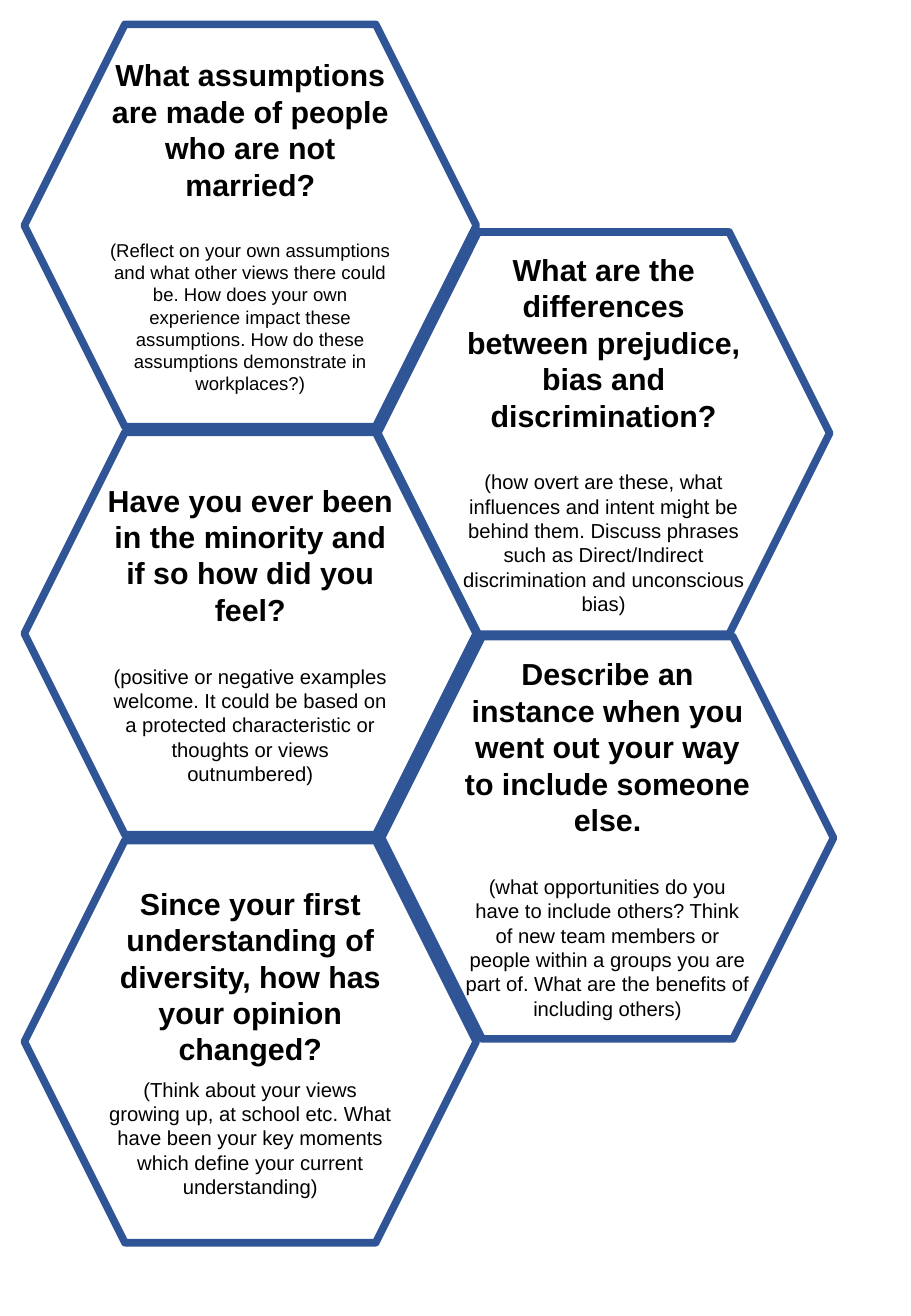
import pptx
import pptx.util
import pptx.dml.color
import pptx.enum.shapes
import pptx.enum.text

Cm = pptx.util.Cm
Pt = pptx.util.Pt
hues = {"fill": "FFFFFF", "edge": "2F5597", "text": "000000"}
rgb = {name: pptx.dml.color.RGBColor.from_string(hue) for name, hue in hues.items()}

deck = pptx.Presentation()
deck.slide_width, deck.slide_height = Cm(19.05), Cm(27.51)
slide = deck.slides.add_slide(deck.slide_layouts[6])

left, top, step = 0.51, 0.51, 8.53
cards = [
    (left, top, 11, 21.6,
     "What assumptions are made of people who are not married?",
     "(Reflect on your own assumptions and what other views there could be. How does your own experience impact these assumptions. How do these assumptions demonstrate in workplaces?)"),
    (7.9, 4.85, 12, 21.6,
     "What are the differences between prejudice, bias and discrimination?",
     "(how overt are these, what influences and intent might be behind them. Discuss phrases such as Direct/Indirect discrimination and unconscious bias)"),
    (left, top + step, 12, 21.6,
     "Have you ever been in the minority and if so how did you feel?",
     "(positive or negative examples welcome. It could be based on a protected characteristic or thoughts or views outnumbered)"),
    (7.98, 13.31, 12, 21.6,
     "Describe an instance when you went out your way to include someone else.",
     "(what opportunities do you have to include others? Think of new team members or people within a groups you are part of. What are the benefits of including others)"),
    (left, top + 2 * step, 12, 5.8,
     "Since your first understanding of diversity, how has your opinion changed?",
     "(Think about your views growing up, at school etc. What have been your key moments which define your current understanding)"),
]

for x, y, size, gap, ask, hint in cards:
    card = slide.shapes.add_shape(
        pptx.enum.shapes.MSO_SHAPE.HEXAGON, Cm(x), Cm(y), Cm(9.45), Cm(8.41))
    card.shadow.inherit = False
    card.fill.solid()
    card.fill.fore_color.rgb = rgb["fill"]
    card.line.color.rgb = rgb["edge"]
    card.line.width = Pt(4.5)
    frame = card.text_frame
    frame.word_wrap = True
    frame.vertical_anchor = pptx.enum.text.MSO_ANCHOR.MIDDLE
    lines = [(frame.paragraphs[0], ask, 18, True, 0),
             (frame.add_paragraph(), hint, size, False, gap)]
    for para, words, pts, bold, space in lines:
        para.text = words
        para.alignment = pptx.enum.text.PP_ALIGN.CENTER
        para.space_before = Pt(space)
        para.font.name = "Arial"
        para.font.size = Pt(pts)
        para.font.bold = bold
        para.font.color.rgb = rgb["text"]

deck.save("out.pptx")
